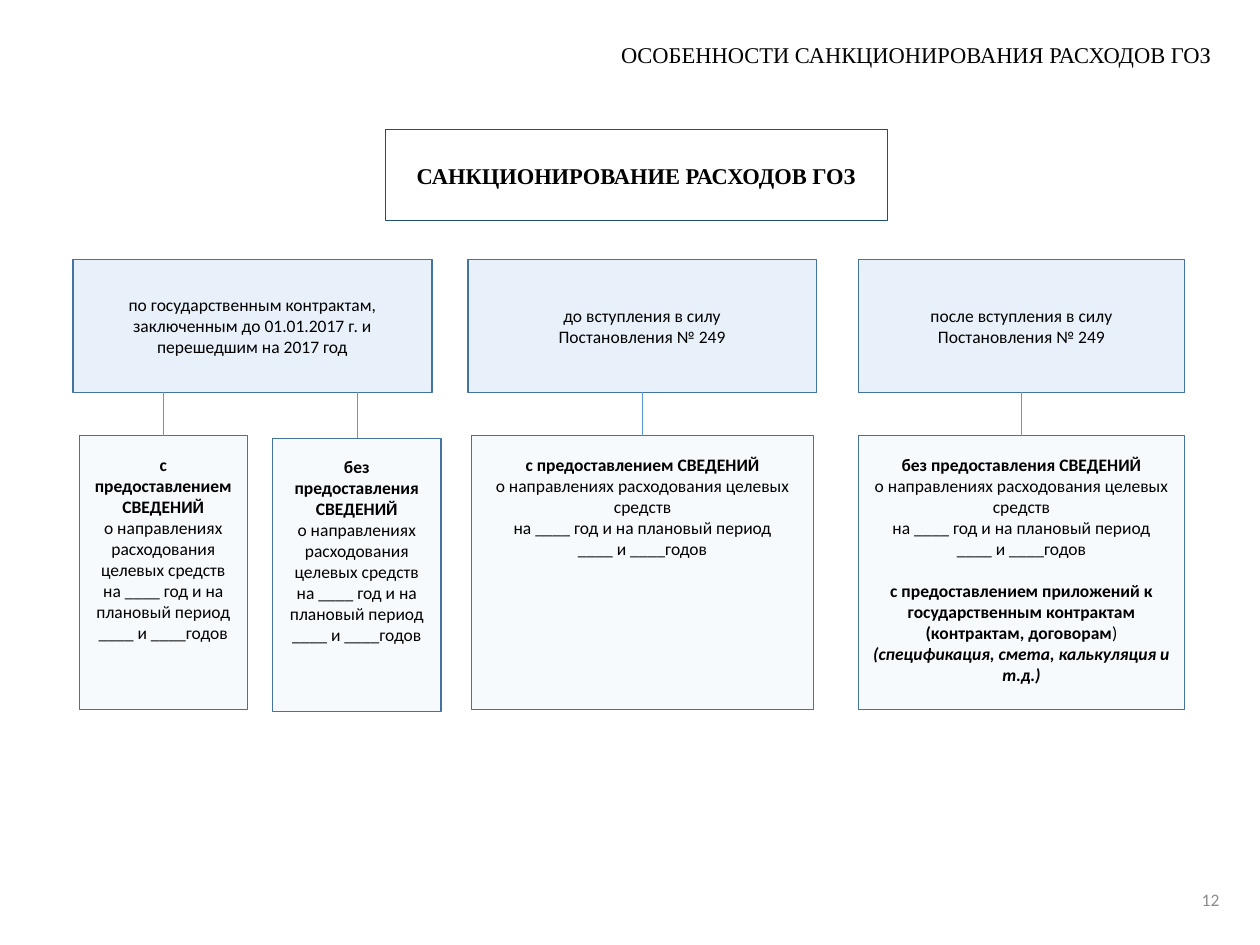
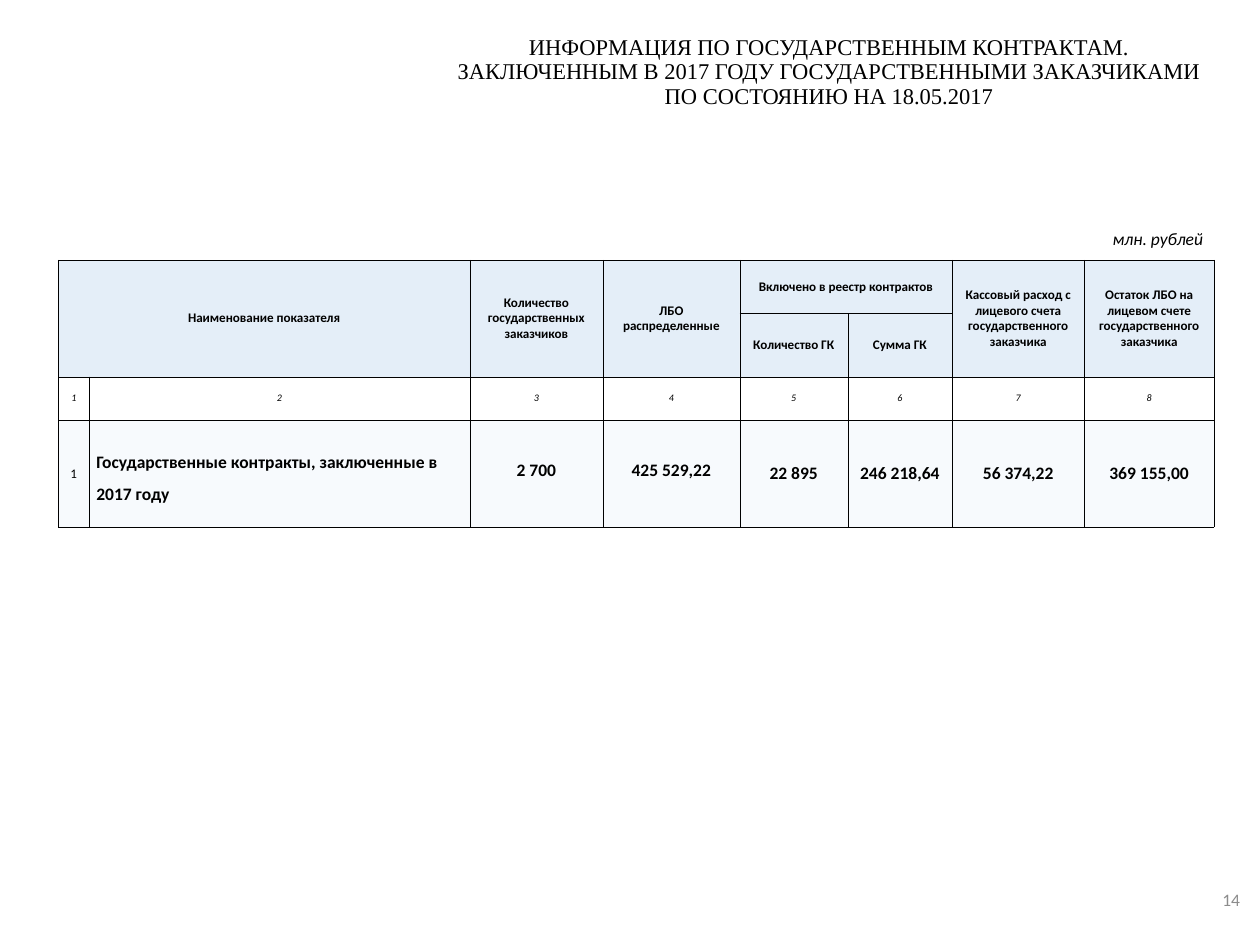
"""Build two slides on sanctioning state defence order spending."""
import dataclasses

import lxml.etree
import pptx
import pptx.dml.color
import pptx.enum.shapes
import pptx.enum.text
import pptx.oxml.ns
import pptx.util

BLACK = pptx.dml.color.RGBColor(0x00, 0x00, 0x00)
WHITE = pptx.dml.color.RGBColor(0xFF, 0xFF, 0xFF)
GRAY = pptx.dml.color.RGBColor(0x8C, 0x8C, 0x8C)
PALE_BLUE = pptx.dml.color.RGBColor(0xDE, 0xEB, 0xF7)
EDGE_BLUE = pptx.dml.color.RGBColor(0x43, 0x73, 0x9E)
DARK_BLUE = pptx.dml.color.RGBColor(0x1F, 0x4E, 0x79)
LINK_BLUE = pptx.dml.color.RGBColor(0x5B, 0x9B, 0xD5)

SERIF = "Times New Roman"
SANS = "Calibri"
COLUMNS, ROWS = 14, 10.5
STRONG, MEDIUM, FAINT, SOLID = 81, 68, 23, 100

ALIGN = pptx.enum.text.PP_ALIGN
ANCHOR = pptx.enum.text.MSO_ANCHOR
qn = pptx.oxml.ns.qn


@dataclasses.dataclass
class Para:
    """A paragraph of (text, bold, italic) spans."""
    spans: list
    gap: float = 0


@dataclasses.dataclass
class Look:
    """The character and paragraph format of a text."""
    size: float = 14
    font: str = SANS
    color: pptx.dml.color.RGBColor = BLACK
    bold: bool = False
    italic: bool = False
    align: ALIGN = ALIGN.CENTER
    line: object = None


class Deck:
    """Holds the style and the current slide, and draws each kind of element."""

    def __init__(self):
        self.deck = pptx.Presentation()
        self.deck.slide_width = pptx.util.Inches(14)
        self.deck.slide_height = pptx.util.Inches(10.5)
        self.page = None

    def across(self, columns):
        return round(self.deck.slide_width * columns / COLUMNS)

    def down(self, rows):
        return round(self.deck.slide_height * rows / ROWS)

    def place(self, left, top, width, height):
        return self.across(left), self.down(top), self.across(width), self.down(height)

    def fill_text(self, frame, paragraphs, look):
        for index, item in enumerate(paragraphs):
            para = frame.paragraphs[0] if index == 0 else frame.add_paragraph()
            para.alignment = look.align
            if look.line:
                para.line_spacing = look.line
            para.font.name, para.font.size = look.font, pptx.util.Pt(look.size)
            para.font.color.rgb = look.color
            para.font.bold, para.font.italic = look.bold, look.italic
            if isinstance(item, str):
                para.add_run().text = item
                continue
            if item.gap:
                para.space_before = pptx.util.Pt(item.gap)
            for text, bold, italic in item.spans:
                span = para.add_run()
                span.text = text
                span.font.bold, span.font.italic = bold, italic

    def frame(self, box, paragraphs, look, anchor, inset=(0.1, 0.05)):
        frame = box.text_frame
        frame.word_wrap = True
        frame.auto_size = pptx.enum.text.MSO_AUTO_SIZE.NONE
        frame.vertical_anchor = anchor
        frame.margin_left = frame.margin_right = self.across(inset[0])
        frame.margin_top = self.down(inset[1])
        frame.margin_bottom = self.down(0.05)
        self.fill_text(frame, paragraphs, look)

    def tint(self, fill, element, color, opacity):
        fill.solid()
        fill.fore_color.rgb = color
        if opacity < SOLID:
            shade = element.find(qn("a:solidFill")).find(qn("a:srgbClr"))
            lxml.etree.SubElement(shade, qn("a:alpha"), val=str(opacity * 1000))

    def slide(self, title, place, number, number_right, line=None):
        self.page = self.deck.slides.add_slide(self.deck.slide_layouts[5])
        box = self.page.shapes.title
        box.left, box.top, box.width, box.height = self.place(*place)
        self.frame(box, title, Look(18, SERIF, line=line), ANCHOR.TOP)
        self.text(number, (number_right - 0.56, 9.71, 0.56, 0.56),
                  Look(color=GRAY, align=ALIGN.RIGHT), ANCHOR.MIDDLE)

    def text(self, text, place, look, anchor=ANCHOR.TOP):
        box = self.page.shapes.add_textbox(*self.place(*place))
        self.frame(box, [text], look, anchor, (0.12, 0.06))

    def box(self, paragraphs, place, look=Look(), opacity=0, edge=EDGE_BLUE,
            weight=1, anchor=ANCHOR.MIDDLE, inset=(0.1, 0.05)):
        kind = pptx.enum.shapes.MSO_SHAPE.RECTANGLE
        box = self.page.shapes.add_shape(kind, *self.place(*place))
        box.shadow.inherit = False
        if opacity:
            self.tint(box.fill, box._element.spPr, PALE_BLUE, opacity)
        else:
            box.fill.background()
        box.line.color.rgb = edge
        box.line.width = pptx.util.Pt(weight)
        self.frame(box, paragraphs, look, anchor, inset)

    def link(self, column, top, bottom):
        straight = pptx.enum.shapes.MSO_CONNECTOR.STRAIGHT
        link = self.page.shapes.add_connector(
            straight, self.across(column), self.down(bottom), self.across(column), self.down(top))
        link.line.color.rgb = LINK_BLUE
        link.line.width = pptx.util.Pt(0.5)
        lxml.etree.SubElement(link._element.spPr, qn("a:effectLst"))

    def table(self, left, top, widths, heights):
        place = self.place(left, top, sum(widths), sum(heights))
        table = self.page.shapes.add_table(len(heights), len(widths), *place).table
        table.first_row = table.horz_banding = False
        for column, width in zip(table.columns, widths):
            column.width = self.across(width)
        for row, height in zip(table.rows, heights):
            row.height = self.down(height)
        return table

    def cell(self, cell, paragraphs, look, inset=0.01):
        cell.vertical_anchor = ANCHOR.MIDDLE
        cell.margin_left = cell.margin_right = self.across(inset)
        cell.margin_top = cell.margin_bottom = 0
        self.fill_text(cell.text_frame, paragraphs, look)

    def cell_style(self, cell, color, opacity):
        properties = cell._tc.get_or_add_tcPr()
        self.tint(cell.fill, properties, color, opacity)
        for index, side in enumerate(("lnL", "lnR", "lnT", "lnB")):
            edge = lxml.etree.Element(qn("a:" + side), w=str(int(pptx.util.Pt(0.25))))
            paint = lxml.etree.SubElement(edge, qn("a:solidFill"))
            lxml.etree.SubElement(paint, qn("a:srgbClr"), val=str(BLACK))
            properties.insert(index, edge)


def spending_slide(deck):
    deck.slide(["ОСОБЕННОСТИ САНКЦИОНИРОВАНИЯ РАСХОДОВ ГОЗ"], (6.73, 0.4, 6.9, 0.4), "12", 13.67)
    deck.box(["САНКЦИОНИРОВАНИЕ РАСХОДОВ ГОЗ"], (4.28, 1.44, 5.58, 1.01),
             Look(18, SERIF, bold=True), edge=DARK_BLUE, weight=0.75)

    case_top, case_height = 2.88, 1.48
    cases = [
        (0.81, 3.99, ["по государственным контрактам, заключенным до 01.01.2017 г. "
                      "и перешедшим на 2017 год"]),
        (5.2, 3.87, ["до вступления в силу", "Постановления № 249"]),
        (9.54, 3.62, ["после вступления в силу", "Постановления № 249"]),
    ]
    for left, width, lines in cases:
        deck.box(lines, (left, case_top, width, case_height), opacity=MEDIUM)

    submitted = "с предоставлением СВЕДЕНИЙ"
    omitted = "без предоставления СВЕДЕНИЙ"
    period = ["о направлениях расходования целевых средств",
              "на ____ год и на плановый период", "____ и ____годов"]
    annexes = Para([
        ("с предоставлением приложений к государственным контрактам "
         "(контрактам, договорам", True, False),
        (") ", False, False),
        ("(спецификация, смета, калькуляция и т.д.)", True, True)], gap=17)
    details = [
        (0.88, 4.84, 1.87, submitted, []),
        (3.03, 4.87, 1.87, omitted, []),
        (5.24, 4.84, 3.8, submitted, []),
        (9.54, 4.84, 3.62, omitted, [annexes]),
    ]
    for left, top, width, heading, extra in details:
        deck.box([Para([(heading, True, False)]), *period, *extra], (left, top, width, 3.04),
                 opacity=FAINT, anchor=ANCHOR.TOP, inset=(0.13, 0.2))
        deck.link(left + width / 2, case_top + case_height, top)


def contracts_slide(deck):
    deck.slide(["ИНФОРМАЦИЯ ПО ГОСУДАРСТВЕННЫМ КОНТРАКТАМ.",
                "ЗАКЛЮЧЕННЫМ В 2017 ГОДУ ГОСУДАРСТВЕННЫМИ ЗАКАЗЧИКАМИ",
                "ПО СОСТОЯНИЮ НА 18.05.2017"], (4.62, 0.35, 9.18, 1.21), "14", 13.9, line=0.9)
    deck.text("млн. рублей", (12.04, 2.47, 1.45, 0.35), Look(italic=True, align=ALIGN.RIGHT))

    table = deck.table(0.65, 2.89, [0.34, 4.23, 1.48, 1.52, 1.2, 1.16, 1.47, 1.44],
                       [0.59, 0.7, 0.48, 1.19])
    row_styles = [(PALE_BLUE, STRONG), (PALE_BLUE, STRONG), (WHITE, SOLID), (PALE_BLUE, FAINT)]
    for row, style in enumerate(row_styles):
        for column in range(len(table.columns)):
            deck.cell_style(table.cell(row, column), *style)

    headings = [
        (0, 0, 2, 2, ["Наименование показателя"]),
        (0, 2, 2, 1, ["Количество государственных заказчиков"]),
        (0, 3, 2, 1, ["ЛБО", "распределенные"]),
        (0, 4, 1, 2, ["Включено в реестр контрактов"]),
        (1, 4, 1, 1, ["Количество ГК"]),
        (1, 5, 1, 1, ["Сумма ГК"]),
        (0, 6, 2, 1, ["Кассовый расход с лицевого счета государственного заказчика"]),
        (0, 7, 2, 1, ["Остаток ЛБО на лицевом счете государственного заказчика"]),
    ]
    for row, column, tall, wide, lines in headings:
        cell = table.cell(row, column)
        if tall * wide > 1:
            cell.merge(table.cell(row + tall - 1, column + wide - 1))
        deck.cell(cell, lines, Look(10.5, bold=True), 0.08)

    for column in range(len(table.columns)):
        deck.cell(table.cell(2, column), [str(column + 1)], Look(8, italic=True))

    deck.cell(table.cell(3, 0), ["1"], Look(10.5))
    deck.cell(table.cell(3, 1), ["Государственные контракты, заключенные в 2017 году"],
              Look(bold=True, align=ALIGN.LEFT, line=1.5), 0.08)
    amounts = ["2 700", "425 529,22", "22 895", "246 218,64", "56 374,22", "369 155,00"]
    for column, amount in enumerate(amounts, start=2):
        line = pptx.util.Pt(12) if column < 4 else None
        deck.cell(table.cell(3, column), [amount], Look(bold=True, line=line))


def main():
    deck = Deck()
    spending_slide(deck)
    contracts_slide(deck)
    deck.deck.save("out.pptx")


if __name__ == "__main__":
    main()
